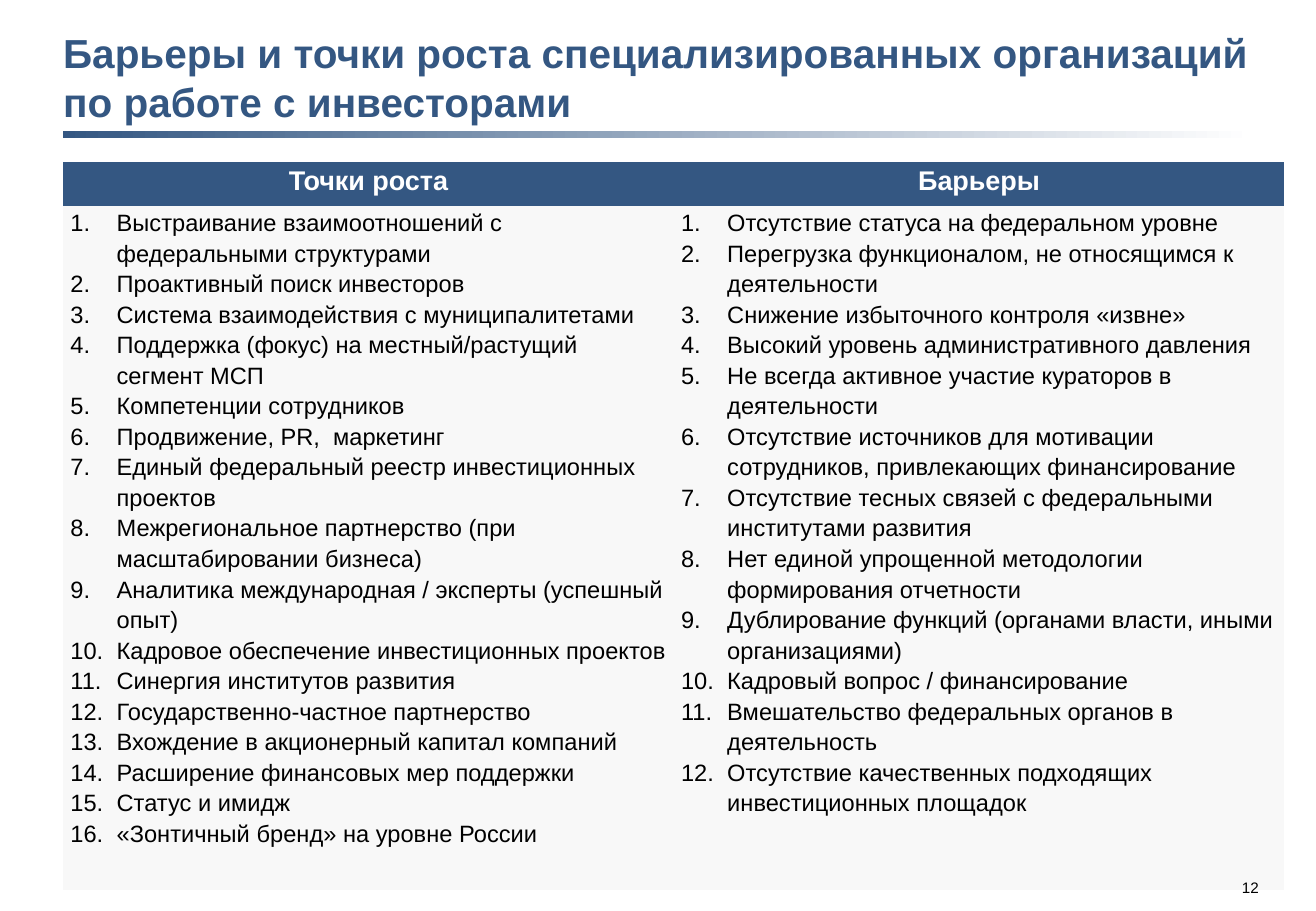
from lxml import etree
from pptx import Presentation
from pptx.dml.color import RGBColor
from pptx.enum.shapes import MSO_SHAPE
from pptx.enum.text import MSO_ANCHOR, PP_ALIGN
from pptx.oxml.ns import qn
from pptx.util import Inches, Pt

RECTANGLE = MSO_SHAPE.RECTANGLE
BOTTOM = MSO_ANCHOR.BOTTOM
CENTER, LEFT, RIGHT = PP_ALIGN.CENTER, PP_ALIGN.LEFT, PP_ALIGN.RIGHT

NAVY = RGBColor(0x34, 0x57, 0x82)
PALE = RGBColor(0xF8, 0xF8, 0xF8)
WHITE = RGBColor(0xFF, 0xFF, 0xFF)
BLACK = RGBColor(0, 0, 0)
FONT = "Arial"
NO_GRID_STYLE = "{2D5ABB26-0587-4C30-8999-92F81FD0307C}"

TITLE = "Барьеры и точки роста специализированных организаций по работе с инвесторами"
COLUMNS = {
    "Точки роста": [
        "Выстраивание взаимоотношений с федеральными структурами",
        "Проактивный поиск инвесторов",
        "Система взаимодействия с муниципалитетами",
        "Поддержка (фокус) на местный/растущий сегмент МСП",
        "Компетенции сотрудников",
        "Продвижение, PR,  маркетинг",
        "Единый федеральный реестр инвестиционных проектов",
        "Межрегиональное партнерство (при масштабировании бизнеса)",
        "Аналитика международная / эксперты (успешный опыт)",
        "Кадровое обеспечение инвестиционных проектов",
        "Синергия институтов развития",
        "Государственно-частное партнерство",
        "Вхождение в акционерный капитал компаний",
        "Расширение финансовых мер поддержки",
        "Статус и имидж",
        "«Зонтичный бренд» на уровне России",
    ],
    "Барьеры": [
        "Отсутствие статуса на федеральном уровне",
        "Перегрузка функционалом, не относящимся к деятельности",
        "Снижение избыточного контроля «извне»",
        "Высокий уровень административного давления",
        "Не всегда активное участие кураторов в деятельности",
        "Отсутствие источников для мотивации сотрудников, привлекающих финансирование",
        "Отсутствие тесных связей с федеральными институтами развития",
        "Нет единой упрощенной методологии формирования отчетности",
        "Дублирование функций (органами власти, иными организациями)",
        "Кадровый вопрос / финансирование",
        "Вмешательство федеральных органов в деятельность",
        "Отсутствие качественных подходящих инвестиционных площадок",
    ],
}


def style(paragraph, size, color, bold=False, align=LEFT):
    paragraph.alignment = align
    font = paragraph.font
    font.name, font.size, font.bold = FONT, Pt(size), bold
    font.color.rgb = color


def number(paragraph, indent):
    """Make the paragraph an item of a numbered list with a hanging indent."""
    properties = paragraph._p.get_or_add_pPr()
    properties.set("marL", str(Inches(indent)))
    properties.set("indent", str(-Inches(indent)))
    etree.SubElement(properties, qn("a:buFont"), typeface="+mj-lt")
    etree.SubElement(properties, qn("a:buAutoNum"), type="arabicPeriod")


def add_label(slide, left, top, width, height, text, pad=0, wrap=True):
    frame = slide.shapes.add_textbox(
        Inches(left), Inches(top), Inches(width), Inches(height)).text_frame
    frame.margin_left = frame.margin_right = 0
    frame.margin_top = frame.margin_bottom = Inches(pad)
    frame.word_wrap = wrap
    frame.text = text
    return frame


def add_heading(slide, left, top, width, height):
    """Title standing on a rule that fades out to the right."""
    rule_height = 0.06
    title_height = height - rule_height
    rule = slide.shapes.add_shape(
        RECTANGLE, Inches(left), Inches(top + title_height),
        Inches(width), Inches(rule_height))
    rule.shadow.inherit = False
    rule.line.fill.background()
    rule.fill.gradient()
    rule.fill.gradient_angle = 0
    for stop, color, position in zip(rule.fill.gradient_stops, (NAVY, WHITE), (0, 1)):
        stop.color.rgb = color
        stop.position = position

    title = add_label(slide, left, top, width, title_height, TITLE, pad=0.05)
    title.vertical_anchor = BOTTOM
    style(title.paragraphs[0], 24, NAVY, bold=True)


def fill_cell(cell, color, lines):
    """Fill the cell and return its paragraphs, one for each line."""
    cell.fill.solid()
    cell.fill.fore_color.rgb = color
    cell.margin_left = cell.margin_right = Inches(0.06)
    cell.margin_top = cell.margin_bottom = 0
    cell.text_frame.text = "\n".join(lines)
    for paragraph in cell.text_frame.paragraphs:
        paragraph.line_spacing = 1.15
    return cell.text_frame.paragraphs


def add_comparison(slide, left, top, width, height):
    header_height = 0.37
    table_frame = slide.shapes.add_table(
        2, len(COLUMNS), Inches(left), Inches(top), Inches(width), Inches(height))
    table = table_frame.table
    table.horz_banding = False
    for style_id in table_frame._element.iter(qn("a:tableStyleId")):
        style_id.text = NO_GRID_STYLE
    table.rows[0].height = Inches(header_height)
    table.rows[1].height = Inches(height - header_height)

    for column, (heading, items) in enumerate(COLUMNS.items()):
        for paragraph in fill_cell(table.cell(0, column), NAVY, [heading]):
            style(paragraph, 16, WHITE, bold=True, align=CENTER)
        for paragraph in fill_cell(table.cell(1, column), PALE, items):
            number(paragraph, 0.38)
            style(paragraph, 14, BLACK)


def add_page_number(slide, left, top, width, height):
    page = add_label(slide, left, top, width, height, "12", wrap=False)
    style(page.paragraphs[0], 9, BLACK, align=RIGHT)


def main():
    deck = Presentation()
    deck.slide_width, deck.slide_height = Inches(10.83), Inches(7.5)
    slide = deck.slides.add_slide(deck.slide_layouts[6])
    add_heading(slide, 0.52, 0.18, 9.8, 0.96)
    add_comparison(slide, 0.52, 1.33, 10.05, 5.21)
    add_page_number(slide, 10.15, 7.23, 0.21, 0.14)
    deck.save("out.pptx")


if __name__ == "__main__":
    main()
